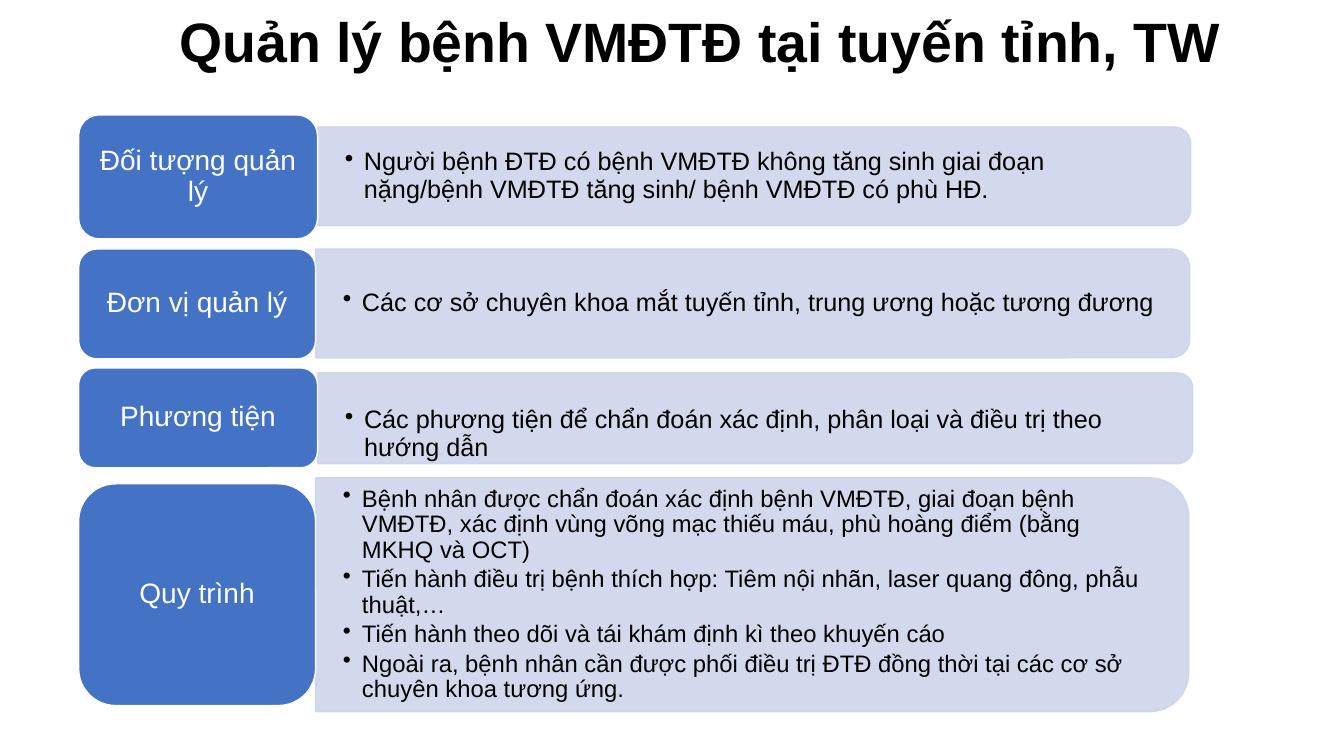
from lxml.etree import SubElement
from pptx import Presentation
from pptx.dml.color import RGBColor
from pptx.enum.shapes import MSO_SHAPE
from pptx.enum.text import MSO_ANCHOR, PP_ALIGN
from pptx.oxml.ns import qn
from pptx.util import Inches, Pt

TITLE = "Quản lý bệnh VMĐTĐ tại tuyến tỉnh, TW"
# label, label top and height, panel top and height, text size, text drop, bullets
ROWS = [
    ("Đối tượng quản lý", 1.14, 1.23, 1.26, 0.98, 18, 0, [
        "Người bệnh ĐTĐ có bệnh VMĐTĐ không tăng sinh giai đoạn nặng/bệnh VMĐTĐ "
        "tăng sinh/ bệnh VMĐTĐ có phù HĐ."]),
    ("Đơn vị quản lý", 2.47, 1.09, 2.47, 1.08, 18, 0, [
        "Các cơ sở chuyên khoa mắt tuyến tỉnh, trung ương hoặc tương đương"]),
    ("Phương tiện", 3.65, 0.99, 3.7, 0.9, 18, 0.16, [
        "Các phương tiện để chẩn đoán xác định, phân loại và điều trị theo hướng dẫn"]),
    ("Quy trình", 4.8, 2.2, 4.74, 2.32, 17, 0, [
        "Bệnh nhân được chẩn đoán xác định bệnh VMĐTĐ, giai đoạn bệnh VMĐTĐ, "
        "xác định vùng võng mạc thiếu máu, phù hoàng điểm (bằng MKHQ và OCT)",
        "Tiến hành điều trị bệnh thích hợp: Tiêm nội nhãn, laser quang đông, phẫu thuật,…",
        "Tiến hành theo dõi và tái khám định kì theo khuyến cáo",
        "Ngoài ra, bệnh nhân cần được phối điều trị ĐTĐ đồng thời tại các cơ sở "
        "chuyên khoa tương ứng."]),
]

LABEL_LEFT = 0.78
LABEL_WIDTHS = (2.37, 2.35, 2.37, 2.35)
PANEL_WIDTHS = (8.66, 8.67, 8.68, 8.66)
CORNER_INSET = 0.049  # share of a panel's height taken by its rounded corners
BLACK = RGBColor(0x00, 0x00, 0x00)
WHITE = RGBColor(0xFF, 0xFF, 0xFF)
BLUE = RGBColor(0x44, 0x72, 0xC4)
PALE_BLUE = RGBColor(0xCF, 0xD5, 0xEA)


def write_text(shape, lines, size, color=BLACK, bold=False, bullet=False,
               align=PP_ALIGN.CENTER, margins=(0.1, 0.05), space_after=0):
    frame = shape.text_frame
    frame.word_wrap = True
    frame.vertical_anchor = MSO_ANCHOR.MIDDLE
    frame.margin_left = frame.margin_right = Inches(margins[0])
    frame.margin_top = frame.margin_bottom = Inches(margins[1])
    for index, line in enumerate(lines):
        paragraph = frame.paragraphs[0] if index == 0 else frame.add_paragraph()
        paragraph.alignment = align
        paragraph.line_spacing = 0.9
        paragraph.space_after = Pt(space_after)
        if bullet:
            properties = paragraph._p.get_or_add_pPr()
            properties.set("marL", str(Inches(0.19)))
            properties.set("indent", str(-Inches(0.19)))
            SubElement(properties, qn("a:buChar"), char="•")
        run = paragraph.add_run()
        run.text = line
        run.font.name = "Arial"
        run.font.size = Pt(size)
        run.font.bold = bold
        run.font.color.rgb = color


def add_textbox(slide, left, top, width, height):
    return slide.shapes.add_textbox(*map(Inches, (left, top, width, height)))


def add_block(slide, kind, left, top, width, height, fill, line):
    shape = slide.shapes.add_shape(kind, *map(Inches, (left, top, width, height)))
    shape.shadow.inherit = False
    shape.fill.solid()
    shape.fill.fore_color.rgb = fill
    shape.line.color.rgb = line
    shape.line.width = Pt(1)
    return shape


def add_panel(slide, left, top, width, height):
    """Turn a shape with two rounded top corners so that they face right."""
    panel = add_block(slide, MSO_SHAPE.ROUND_2_SAME_RECTANGLE,
                      left + (width - height) / 2, top + (height - width) / 2,
                      height, width, PALE_BLUE, PALE_BLUE)
    panel.rotation = 90
    for color in panel._element.spPr.iter(qn("a:srgbClr")):
        SubElement(color, qn("a:alpha"), val="90000")


def add_row(slide, row, label_width, panel_width):
    label, label_top, label_height, top, height, size, drop, bullets = row
    left = LABEL_LEFT + label_width
    add_panel(slide, left, top, panel_width, height)
    inset = CORNER_INSET * height
    details = add_textbox(slide, left, top + inset + drop,
                          panel_width - inset, height - 2 * inset)
    write_text(details, bullets, size, bullet=True, align=PP_ALIGN.LEFT,
               margins=(0.27, 0.14), space_after=0.15 * size)
    block = add_block(slide, MSO_SHAPE.ROUNDED_RECTANGLE, LABEL_LEFT, label_top,
                      label_width, label_height, BLUE, WHITE)
    write_text(block, [label], 20, color=WHITE, margins=(0.08, 0.04))


def main():
    presentation = Presentation()
    presentation.slide_width = Inches(13.33)
    presentation.slide_height = Inches(7.5)
    slide = presentation.slides.add_slide(presentation.slide_layouts[6])
    title = add_textbox(slide, 0.92, 0.13, 12.05, 0.62)
    write_text(title, [TITLE], 39.6, bold=True)
    for row, label_width, panel_width in zip(ROWS, LABEL_WIDTHS, PANEL_WIDTHS):
        add_row(slide, row, label_width, panel_width)
    presentation.save("out.pptx")


if __name__ == "__main__":
    main()
